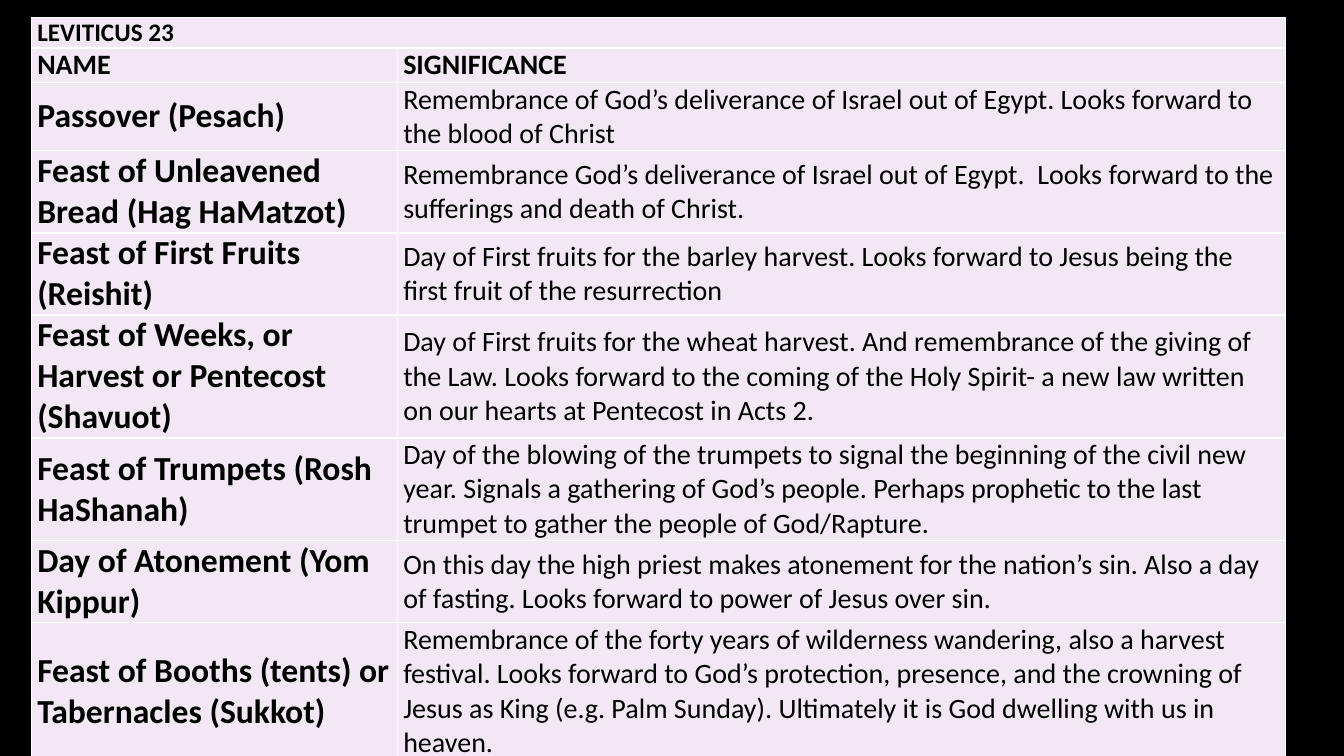
from dataclasses import dataclass

from lxml import etree
from pptx import Presentation
from pptx import util as u
from pptx.dml.color import RGBColor
from pptx.enum import text
from pptx.oxml.ns import qn


@dataclass(frozen=True)
class Theme:
    font: str = "Calibri"
    background: str = "000000"
    ink: str = "000000"
    cell: str = "F1E8F4"
    border: str = "FFFFFF"
    title_size: int = 18
    body_size: int = 20
    feast_size: int = 24


FEASTS = [
    ("Passover (Pesach)",
     "Remembrance of God’s deliverance of Israel out of Egypt. "
     "Looks forward to the blood of Christ"),
    ("Feast of Unleavened Bread (Hag HaMatzot)",
     "Remembrance God’s deliverance of Israel out of Egypt.  "
     "Looks forward to the sufferings and death of Christ."),
    ("Feast of First Fruits (Reishit)",
     "Day of First fruits for the barley harvest. "
     "Looks forward to Jesus being the first fruit of the resurrection"),
    ("Feast of Weeks, or Harvest or Pentecost (Shavuot)",
     "Day of First fruits for the wheat harvest. And remembrance of the giving of the Law. "
     "Looks forward to the coming of the Holy Spirit- a new law written on our hearts "
     "at Pentecost in Acts 2."),
    ("Feast of Trumpets (Rosh HaShanah)",
     "Day of the blowing of the trumpets to signal the beginning of the civil new year. "
     "Signals a gathering of God’s people. "
     "Perhaps prophetic to the last trumpet to gather the people of God/Rapture."),
    ("Day of Atonement (Yom Kippur)",
     "On this day the high priest makes atonement for the nation’s sin. "
     "Also a day of fasting. Looks forward to power of Jesus over sin."),
    ("Feast of Booths (tents) or Tabernacles (Sukkot)",
     "Remembrance of the forty years of wilderness wandering, also a harvest festival. "
     "Looks forward to God’s protection, presence, and the crowning of Jesus as King "
     "(e.g. Palm Sunday). Ultimately it is God dwelling with us in heaven."),
]
COLUMN_WIDTHS = [3.63, 8.81]
ROW_HEIGHTS = [0.21, 0.21, 0.41, 0.48, 0.41, 0.62, 0.78, 0.58, 0.78]


class SlideBuilder:
    def __init__(self, page, theme):
        self.page = page
        self.theme = theme

    def background(self):
        fill = self.page.background.fill
        fill.solid()
        fill.fore_color.rgb = RGBColor.from_string(self.theme.background)

    def table(self, left, top, height, widths, heights):
        """Add an unbanded table whose frame keeps the given height."""
        frame = self.page.shapes.add_table(
            len(heights), len(widths), u.Inches(left), u.Inches(top),
            u.Inches(sum(widths)), u.Inches(height))
        table = frame.table
        table.first_row = table.horz_banding = False
        for column, width in zip(table.columns, widths):
            column.width = u.Inches(width)
        for row, row_height in zip(table.rows, heights):
            row.height = u.Inches(row_height)
        frame.height = u.Inches(height)
        for cell in table.iter_cells():
            self.cell_style(cell)
        return table

    def cell_style(self, cell):
        cell.margin_left = cell.margin_right = u.Inches(0.06)
        cell.margin_top = cell.margin_bottom = 0
        cell.vertical_anchor = text.MSO_ANCHOR.MIDDLE
        properties = cell._tc.get_or_add_tcPr()
        for side in ("a:lnL", "a:lnR", "a:lnT", "a:lnB"):
            line = etree.SubElement(properties, qn(side), w=str(u.Pt(1)))
            fill = etree.SubElement(line, qn("a:solidFill"))
            etree.SubElement(fill, qn("a:srgbClr"), val=self.theme.border)
        cell.fill.solid()
        cell.fill.fore_color.rgb = RGBColor.from_string(self.theme.cell)

    def cell_text(self, cell, words, size, bold=True):
        span = cell.text_frame.paragraphs[0].add_run()
        span.text = words
        span.font.name = self.theme.font
        span.font.size = u.Pt(size)
        span.font.bold = bold
        span.font.color.rgb = RGBColor.from_string(self.theme.ink)


def main():
    deck = Presentation()
    deck.slide_width, deck.slide_height = u.Inches(13.33), u.Inches(7.5)
    theme = Theme()
    builder = SlideBuilder(deck.slides.add_slide(deck.slide_layouts[6]), theme)
    builder.background()

    table = builder.table(0.31, 0.17, 7.23, COLUMN_WIDTHS, ROW_HEIGHTS)
    table.cell(0, 0).merge(table.cell(0, 1))
    builder.cell_text(table.cell(0, 0), "LEVITICUS 23", theme.title_size)
    for column, heading in enumerate(("NAME", "SIGNIFICANCE")):
        builder.cell_text(table.cell(1, column), heading, theme.body_size)
    for row, (name, significance) in enumerate(FEASTS, start=2):
        builder.cell_text(table.cell(row, 0), name, theme.feast_size)
        builder.cell_text(table.cell(row, 1), significance, theme.body_size, bold=False)

    deck.save("out.pptx")


if __name__ == "__main__":
    main()
